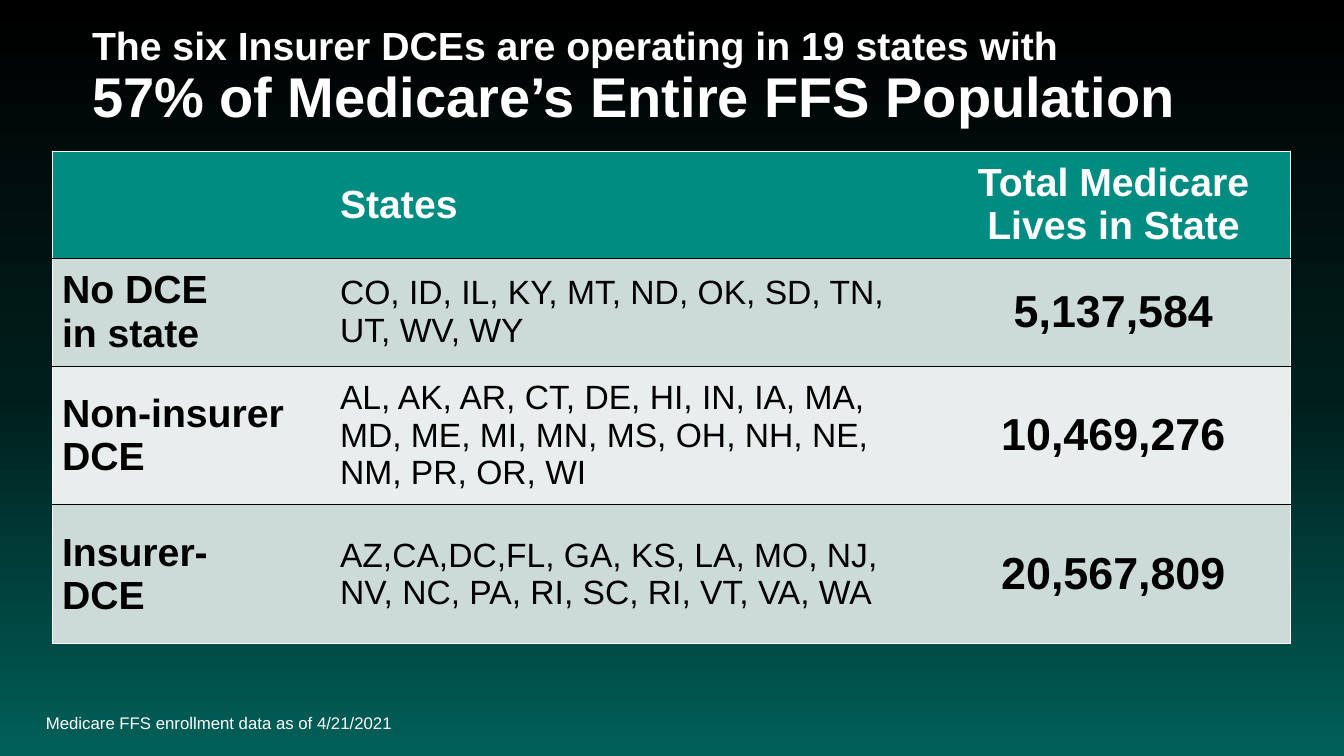
from copy import deepcopy

from lxml.etree import SubElement
from pptx import Presentation
from pptx.dml.color import RGBColor
from pptx.enum.text import MSO_ANCHOR as Anchor, PP_ALIGN as Align
from pptx.oxml.ns import qn
from pptx.util import Pt

PX = 914400 / 100.8
FONT = "Arial"

WHITE = RGBColor(0xFF, 0xFF, 0xFF)
BLACK = RGBColor(0x00, 0x00, 0x00)
DARK_TEAL = RGBColor(0x00, 0x1E, 0x1C)
DEEP_TEAL = RGBColor(0x00, 0x60, 0x59)
HEADER_TEAL = RGBColor(0x00, 0x8C, 0x81)
BAND_DARK = RGBColor(0xCC, 0xDA, 0xD8)
BAND_LIGHT = RGBColor(0xE7, 0xEE, 0xED)

BACKGROUND_STOPS = [(0, BLACK), (0.52, DARK_TEAL), (1, DEEP_TEAL)]
COLUMN_WIDTHS = [278, 606, 355]
ROW_HEIGHTS = [107, 108, 139, 139]
BODY_SIZES = [28, 24, 32]
ROWS = [
    ("", "States", "Total Medicare Lives in State"),
    ("No DCE\nin state",
     "CO, ID, IL, KY, MT, ND, OK, SD, TN, UT, WV, WY",
     "5,137,584"),
    ("Non-insurer DCE",
     "AL, AK, AR, CT, DE, HI, IN, IA, MA, MD, ME, MI, MN, MS, OH, NH, NE, NM, PR, OR, WI",
     "10,469,276"),
    ("Insurer-\nDCE",
     "AZ,CA,DC,FL, GA, KS, LA, MO, NJ, NV, NC, PA, RI, SC, RI, VT, VA, WA",
     "20,567,809"),
]


def px(length):
    return round(length * PX)


def add_run(paragraph, text, size, color, bold=False):
    run = paragraph.add_run()
    run.text = text
    font = run.font
    font.name, font.size, font.bold = FONT, Pt(size), bold
    font.color.rgb = color


def paint_background(slide):
    fill = slide.background.fill
    fill.gradient()
    fill.gradient_angle = 270
    stop_list = slide.element.find(".//" + qn("a:gsLst"))
    stop_list.append(deepcopy(stop_list[0]))
    for stop, (position, color) in zip(fill.gradient_stops, BACKGROUND_STOPS):
        stop.position = position
        stop.color.rgb = color


def add_title(slide):
    title = slide.shapes.title
    title.left, title.top, title.width, title.height = map(px, (82, 5, 1262, 146))
    frame = title.text_frame
    frame.word_wrap = True
    frame.vertical_anchor = Anchor.MIDDLE
    paragraph = frame.paragraphs[0]
    paragraph.alignment = Align.LEFT
    paragraph.line_spacing = 0.9
    add_run(paragraph, "The six Insurer DCEs are operating in 19 states with ", 28, WHITE, True)
    paragraph.add_line_break()
    add_run(paragraph, "57% of Medicare’s Entire FFS Population", 40, WHITE, True)


def set_borders(cell, borders):
    """Set each side (L, R, T, B, in that order) to a colour, or to no line for None."""
    properties = cell._tc.get_or_add_tcPr()
    for index, (side, color) in enumerate(borders.items()):
        line = SubElement(properties, qn(f"a:ln{side}"), w=str(Pt(0.75)))
        properties.insert(index, line)
        if color is None:
            SubElement(line, qn("a:noFill"))
        else:
            solid = SubElement(line, qn("a:solidFill"))
            SubElement(solid, qn("a:srgbClr"), val=str(color))


def fill_cell(cell, text, size, color, bold, alignment, background):
    cell.fill.solid()
    cell.fill.fore_color.rgb = background
    cell.vertical_anchor = Anchor.MIDDLE
    if not text:
        return
    frame = cell.text_frame
    for index, line in enumerate(text.split("\n")):
        paragraph = frame.add_paragraph() if index else frame.paragraphs[0]
        paragraph.alignment = alignment
        add_run(paragraph, line, size, color, bold)


def add_states_table(slide, row_count):
    """Add one build step of the table: the header and the rows revealed so far."""
    last_row, last_column = len(ROWS) - 1, len(COLUMN_WIDTHS) - 1
    heights = ROW_HEIGHTS[:row_count]
    table = slide.shapes.add_table(
        row_count, len(COLUMN_WIDTHS), px(52), px(151),
        px(sum(COLUMN_WIDTHS)), px(sum(heights))).table
    table.horz_banding = False
    for column, width in zip(table.columns, COLUMN_WIDTHS):
        column.width = px(width)
    for r, (row, height) in enumerate(zip(table.rows, heights)):
        row.height = px(height)
        header = r == 0
        background = HEADER_TEAL if header else BAND_DARK if r % 2 else BAND_LIGHT
        for c, cell in enumerate(row.cells):
            fill_cell(
                cell, ROWS[r][c],
                size=28 if header else BODY_SIZES[c],
                color=WHITE if header else BLACK,
                bold=header or c != 1,
                alignment=Align.CENTER if c == last_column else Align.LEFT,
                background=background)
            set_borders(cell, {
                "L": WHITE if c == 0 else None,
                "R": WHITE if c == last_column else None,
                "T": WHITE if header else BLACK,
                "B": WHITE if r == last_row else BLACK,
            })


def add_source_note(slide):
    box = slide.shapes.add_textbox(px(36), px(708), px(369), px(30))
    frame = box.text_frame
    frame.word_wrap = False
    add_run(frame.paragraphs[0], "Medicare FFS enrollment data as of 4/21/2021", 12, WHITE)


def main():
    presentation = Presentation()
    presentation.slide_width = px(1344)
    presentation.slide_height = px(756)
    slide = presentation.slides.add_slide(presentation.slide_layouts[5])
    paint_background(slide)
    add_title(slide)
    add_source_note(slide)
    for row_count in range(2, len(ROWS) + 1):
        add_states_table(slide, row_count)
    presentation.save("out.pptx")


if __name__ == "__main__":
    main()
